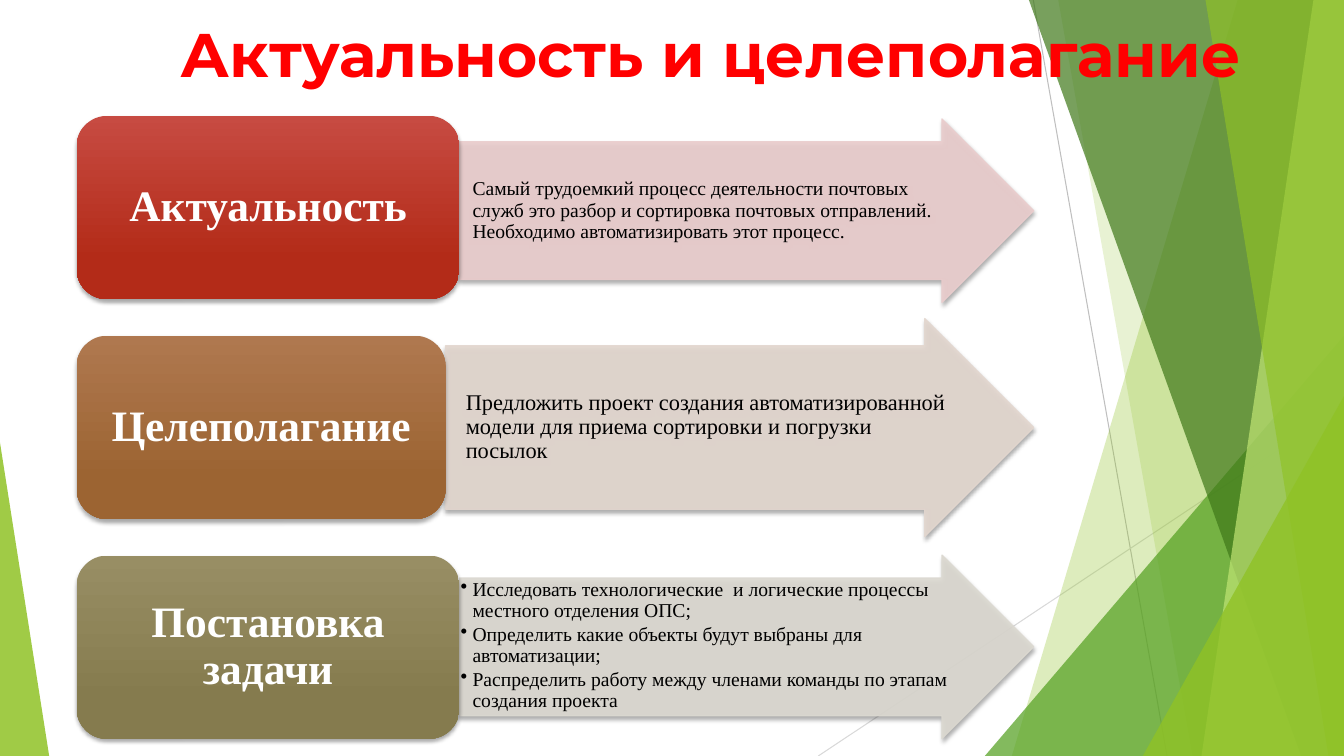
import pptx
import pptx.dml.color
import pptx.enum.shapes
import pptx.enum.text
import pptx.oxml
import pptx.oxml.ns
import pptx.util
from dataclasses import dataclass
from lxml import etree

Cm = pptx.util.Cm
Pt = pptx.util.Pt
Shape = pptx.enum.shapes.MSO_SHAPE
Anchor = pptx.enum.text.MSO_ANCHOR
Align = pptx.enum.text.PP_ALIGN
qn = pptx.oxml.ns.qn

WIDTH, HEIGHT = 33.87, 19.05
LABEL_LEFT, LABEL_TOP, LABEL_HEIGHT, ROW_PITCH = 1.93, 2.92, 4.62, 5.54
ARROW_RIGHT = 26.05
BODY_FONT = "Times New Roman"


@dataclass
class Ray:
    start: tuple[float, float]
    end: tuple[float, float]
    color: str


@dataclass
class Facet:
    top_x: float
    bottom_x: float
    color: str
    opacity: int


@dataclass
class Corner:
    left: float
    top: float
    width: float
    apex: float
    color: str
    opacity: int


@dataclass
class Row:
    label: str
    label_width: float
    gradient: tuple[str, str]
    arrow_top: float
    arrow_height: float
    arrow_color: str
    texts: list[str]
    size: int
    indent: float
    bulleted: bool = False


RAYS = [
    Ray((26.04, 0), (29.41, HEIGHT), "BFBFBF"),
    Ray((WIDTH, 10.24), (20.62, HEIGHT), "D9D9D9"),
]
PANES = [
    Facet(31.19, 25.5, "90C226", 30),
    Facet(26.67, 30.05, "90C226", 20),
    Corner(24.82, 8.46, 9.05, 1, "54A021", 72),
    Facet(25.93, 32.79, "3F7819", 70),
    Facet(33.1, 30.28, "C0E474", 70),
    Facet(30.38, 33.48, "90C226", 65),
    Corner(28.8, 9.98, 5.07, 1, "90C226", 80),
    Corner(0, 11.15, 1.24, 0, "90C226", 85),
]
ROWS = [
    Row("Актуальность", 9.65, ("C74B42", "B32B18"), 3.0, 4.62, "EACDCD",
        ["Самый трудоемкий процесс деятельности почтовых служб это разбор и "
         "сортировка почтовых отправлений. Необходимо автоматизировать этот процесс."],
        14, 0.3),
    Row("Целеполагание", 9.3, ("AF784F", "9C6432"), 8.03, 5.49, "E3D7CF",
        ["Предложить проект создания автоматизированной модели для приема "
         "сортировки и погрузки посылок"], 16, 0.48),
    Row("Постановка задачи", 9.65, ("988E64", "857B4E"), 13.99, 4.62, "DCD9D1",
        ["Исследовать технологические  и логические процессы местного отделения ОПС;",
         "Определить какие объекты будут выбраны для автоматизации;",
         "Распределить работу между членами команды по этапам создания проекта"],
        14, 0.3, True),
]


def rgb(color: str) -> pptx.dml.color.RGBColor:
    return pptx.dml.color.RGBColor.from_string(color)


def paint(fill, color: str, opacity: int) -> None:
    fill.solid()
    fill.fore_color.rgb = rgb(color)
    color_node = fill._xPr.find(".//" + qn("a:srgbClr"))
    etree.SubElement(color_node, qn("a:alpha"), val=str(opacity * 1000))


def cast_shadow(shape) -> None:
    shape.shadow.inherit = False
    effects = shape.element.spPr.find(qn("a:effectLst"))
    shadow = etree.SubElement(effects, qn("a:outerShdw"), blurRad=str(Pt(3)),
                              dist=str(Pt(2)), dir="5400000", rotWithShape="0")
    color_node = etree.SubElement(shadow, qn("a:srgbClr"), val="000000")
    etree.SubElement(color_node, qn("a:alpha"), val="35000")


def set_frame(frame, anchor, side: float, edge: float) -> None:
    frame.word_wrap = True
    frame.vertical_anchor = anchor
    frame.margin_left = frame.margin_right = Cm(side)
    frame.margin_top = frame.margin_bottom = Cm(edge)


def set_font(para, name: str, size: int, color: str, bold: bool = False) -> None:
    para.font.name = name
    para.font.size = Pt(size)
    para.font.bold = bold
    para.font.color.rgb = rgb(color)


def draw_ray(page, ray: Ray) -> None:
    line = page.shapes.add_connector(pptx.enum.shapes.MSO_CONNECTOR.STRAIGHT,
                                     *map(Cm, ray.start + ray.end))
    line.line.color.rgb = rgb(ray.color)
    line.line.width = Pt(0.75)
    etree.SubElement(line.element.spPr, qn("a:effectLst"))


def draw_pane(page, pane: Facet | Corner) -> None:
    if isinstance(pane, Facet):
        builder = page.shapes.build_freeform(Cm(pane.top_x), 0)
        builder.add_line_segments([(Cm(x), Cm(y)) for x, y in (
            (WIDTH, 0), (WIDTH, HEIGHT), (pane.bottom_x, HEIGHT))], close=True)
        shape = builder.convert_to_shape()
    else:
        shape = page.shapes.add_shape(Shape.ISOSCELES_TRIANGLE, Cm(pane.left), Cm(pane.top),
                                      Cm(pane.width), Cm(HEIGHT - pane.top))
        shape.adjustments[0] = pane.apex
    paint(shape.fill, pane.color, pane.opacity)
    shape.line.fill.background()
    shape.shadow.inherit = False


def draw_arrow(page, row: Row) -> None:
    left = LABEL_LEFT + row.label_width
    arrow = page.shapes.add_shape(Shape.RIGHT_ARROW, Cm(left), Cm(row.arrow_top),
                                  Cm(ARROW_RIGHT - left), Cm(row.arrow_height))
    arrow.adjustments[0] = 0.75
    arrow.adjustments[1] = 0.5
    paint(arrow.fill, row.arrow_color, 90)
    paint(arrow.line.fill, row.arrow_color, 90)
    arrow.line.width = Pt(1)
    cast_shadow(arrow)
    frame = arrow.text_frame
    set_frame(frame, Anchor.TOP if row.bulleted else Anchor.MIDDLE, 0.03, 0.03)
    frame.text = "\n".join(row.texts)
    for para in frame.paragraphs:
        para.alignment = Align.LEFT
        para.line_spacing = 0.9
        para.space_after = Pt(2)
        properties = para._p.get_or_add_pPr()
        properties.set("marL", str(Cm(row.indent)))
        properties.set("indent", str(-Cm(row.indent) if row.bulleted else 0))
        if row.bulleted:
            etree.SubElement(properties, qn("a:buChar"), char="•")
        set_font(para, BODY_FONT, row.size, "000000")


def draw_label(page, row: Row, top: float) -> None:
    label = page.shapes.add_shape(Shape.ROUNDED_RECTANGLE, Cm(LABEL_LEFT), Cm(top),
                                  Cm(row.label_width), Cm(LABEL_HEIGHT))
    label.fill.gradient()
    label.fill.gradient_angle = 270
    for stop, color, position in zip(label.fill.gradient_stops, row.gradient, (0, 0.78)):
        stop.color.rgb = rgb(color)
        stop.position = position
    label.line.fill.background()
    cast_shadow(label)
    set_frame(label.text_frame, Anchor.MIDDLE, 0.33, 0.15)
    label.text_frame.text = row.label
    para = label.text_frame.paragraphs[0]
    para.alignment = Align.CENTER
    para.line_spacing = 0.9
    set_font(para, BODY_FONT, 31, "FFFFFF", True)


def format_title(page) -> None:
    title = page.shapes.title
    title.left, title.top, title.width, title.height = map(Cm, (1.22, 0.28, 30.33, 2.72))
    title.text_frame.text = "Актуальность и целеполагание"
    set_frame(title.text_frame, Anchor.TOP, 0.25, 0.13)
    title.text_frame.auto_size = pptx.enum.text.MSO_AUTO_SIZE.NONE
    para = title.text_frame.paragraphs[0]
    para.alignment = Align.RIGHT
    set_font(para, "Montserrat", 44, "FF0000", True)
    title.element.getparent().append(title.element)


def main() -> None:
    deck = pptx.Presentation()
    deck.slide_width, deck.slide_height = Cm(WIDTH), Cm(HEIGHT)
    page = deck.slides.add_slide(deck.slide_layouts.get_by_name("Title Only"))
    for ray in RAYS:
        draw_ray(page, ray)
    for pane in PANES:
        draw_pane(page, pane)
    format_title(page)
    for index, row in enumerate(ROWS):
        draw_arrow(page, row)
        draw_label(page, row, LABEL_TOP + index * ROW_PITCH)
    deck.save("out.pptx")


if __name__ == "__main__":
    main()
